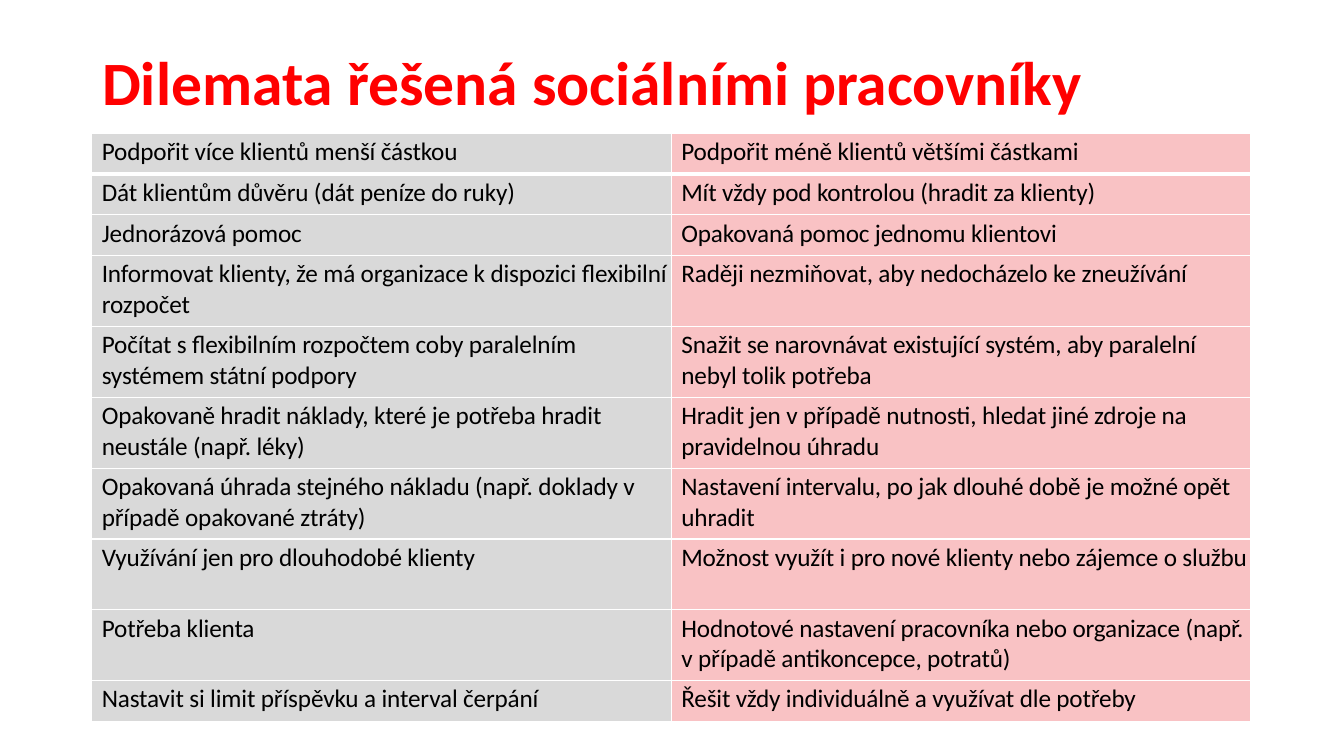
import pptx
import pptx.dml.color
import pptx.enum.text
import pptx.oxml
import pptx.oxml.ns
import pptx.util
from pptx.util import Pt

TITLE = "Dilemata řešená sociálními pracovníky"
DILEMMAS = [
    ("Podpořit více klientů menší částkou",
     "Podpořit méně klientů většími částkami"),
    ("Dát klientům důvěru (dát peníze do ruky)",
     "Mít vždy pod kontrolou (hradit za klienty)"),
    ("Jednorázová pomoc",
     "Opakovaná pomoc jednomu klientovi"),
    ("Informovat klienty, že má organizace k dispozici flexibilní rozpočet",
     "Raději nezmiňovat, aby nedocházelo ke zneužívání"),
    ("Počítat s flexibilním rozpočtem coby paralelním systémem státní podpory",
     "Snažit se narovnávat existující systém, aby paralelní nebyl tolik potřeba"),
    ("Opakovaně hradit náklady, které je potřeba hradit neustále (např. léky)",
     "Hradit jen v případě nutnosti, hledat jiné zdroje na pravidelnou úhradu"),
    ("Opakovaná úhrada stejného nákladu (např. doklady v případě opakované ztráty)",
     "Nastavení intervalu, po jak dlouhé době je možné opět uhradit"),
    ("Využívání jen pro dlouhodobé klienty",
     "Možnost využít i pro nové klienty nebo zájemce o službu"),
    ("Potřeba klienta",
     "Hodnotové nastavení pracovníka nebo organizace (např. v případě antikoncepce, potratů)"),
    ("Nastavit si limit příspěvku a interval čerpání",
     "Řešit vždy individuálně a využívat dle potřeby"),
]
FILLS = ("D9D9D9", "F9C2C4")
LINE_CHARS = 52  # longer texts take two lines
ONE_LINE, TWO_LINES = 29.2, 50.6
LEFT, TOP, COL_W = 65.5, 95, 414


def rgb(code):
    return pptx.dml.color.RGBColor.from_string(code)


def set_margins(box, left, top):
    box.margin_left, box.margin_top = Pt(left), Pt(top)
    box.margin_right = box.margin_bottom = 0


def style(p, size, color, before, bold=False):
    p.space_before = Pt(before)
    p.font.name, p.font.size, p.font.bold = "Calibri", Pt(size), bold
    p.font.color.rgb = rgb(color)


def set_borders(cell, **widths):
    """Draw white borders; widths in points by side (L, R, T, B)."""
    tcPr = cell._tc.get_or_add_tcPr()
    for i, (side, width) in enumerate(widths.items()):
        tcPr.insert(i, pptx.oxml.parse_xml(
            f'<a:ln{side} {pptx.oxml.ns.nsdecls("a")} w="{Pt(width)}">'
            f'<a:solidFill><a:srgbClr val="FFFFFF"/></a:solidFill></a:ln{side}>'))


prs = pptx.Presentation()
prs.slide_width, prs.slide_height = Pt(960), Pt(540)
s = prs.slides.add_slide(prs.slide_layouts[6])

tf = s.shapes.add_textbox(Pt(72), Pt(30.2), Pt(790), Pt(54)).text_frame
tf.word_wrap = True
tf.vertical_anchor = pptx.enum.text.MSO_ANCHOR.MIDDLE
set_margins(tf, 1, 1)
tf.text = TITLE
style(tf.paragraphs[0], 44, "FF0000", 0.9, bold=True)

heights = [TWO_LINES if max(map(len, row)) > LINE_CHARS else ONE_LINE
           for row in DILEMMAS]
table = s.shapes.add_table(len(DILEMMAS), len(FILLS), Pt(LEFT), Pt(TOP),
                           Pt(COL_W * len(FILLS)), Pt(sum(heights))).table
table.first_row = table.horz_banding = False
for col in table.columns:
    col.width = Pt(COL_W)
for i, (texts, height) in enumerate(zip(DILEMMAS, heights)):
    table.rows[i].height = Pt(height)
    for j, (text, fill) in enumerate(zip(texts, FILLS)):
        cell = table.cell(i, j)
        set_margins(cell, 7.2, 2.4)
        cell.fill.solid()
        cell.fill.fore_color.rgb = rgb(fill)
        set_borders(cell, L=1, R=1, T=3 if i == 1 else 1, B=3 if i == 0 else 1)
        cell.text = text
        p = cell.text_frame.paragraphs[0]
        style(p, 18, "000000", 2.4)
        p.runs[0]._r.get_or_add_rPr().set("spc", "-10")

prs.save("out.pptx")
